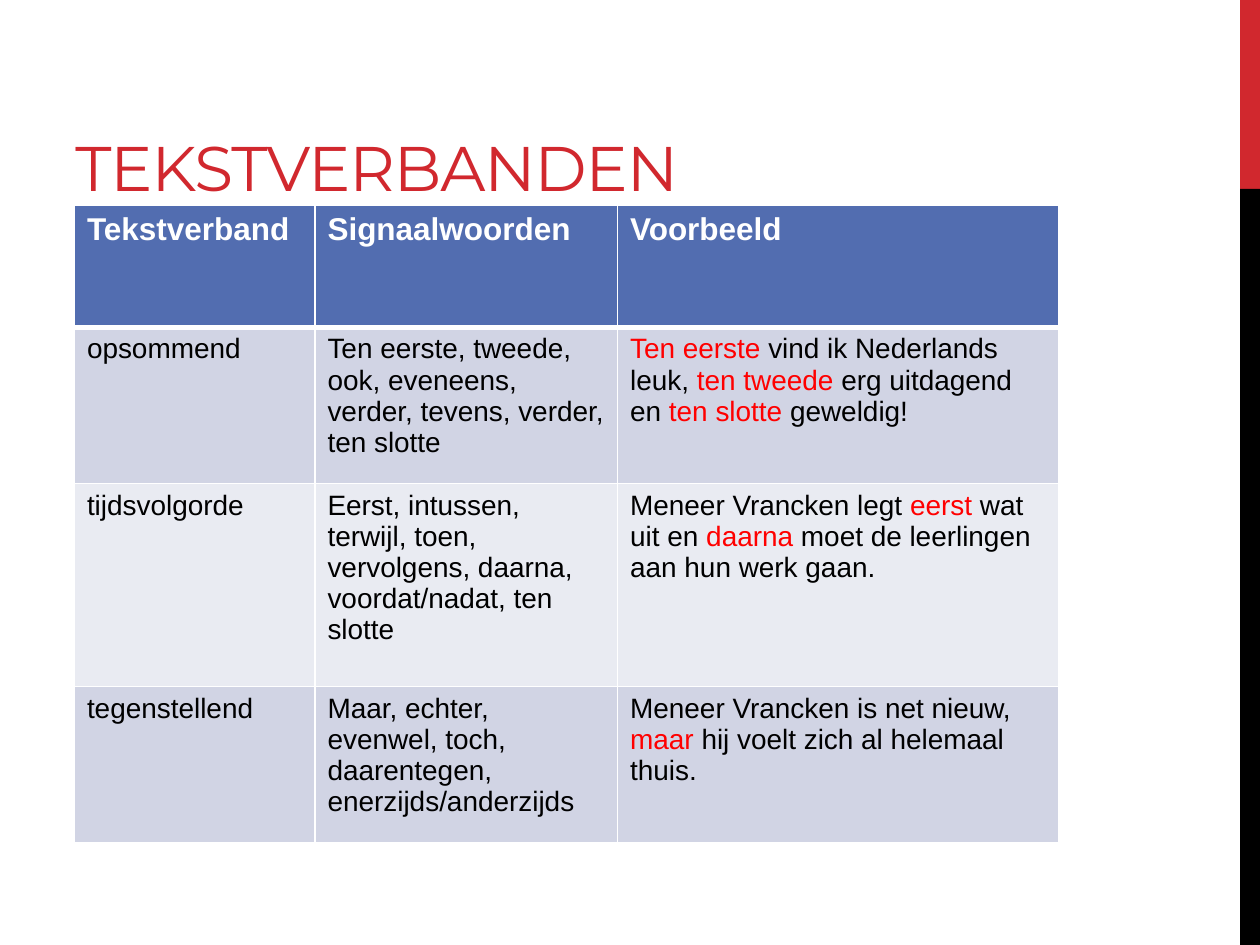
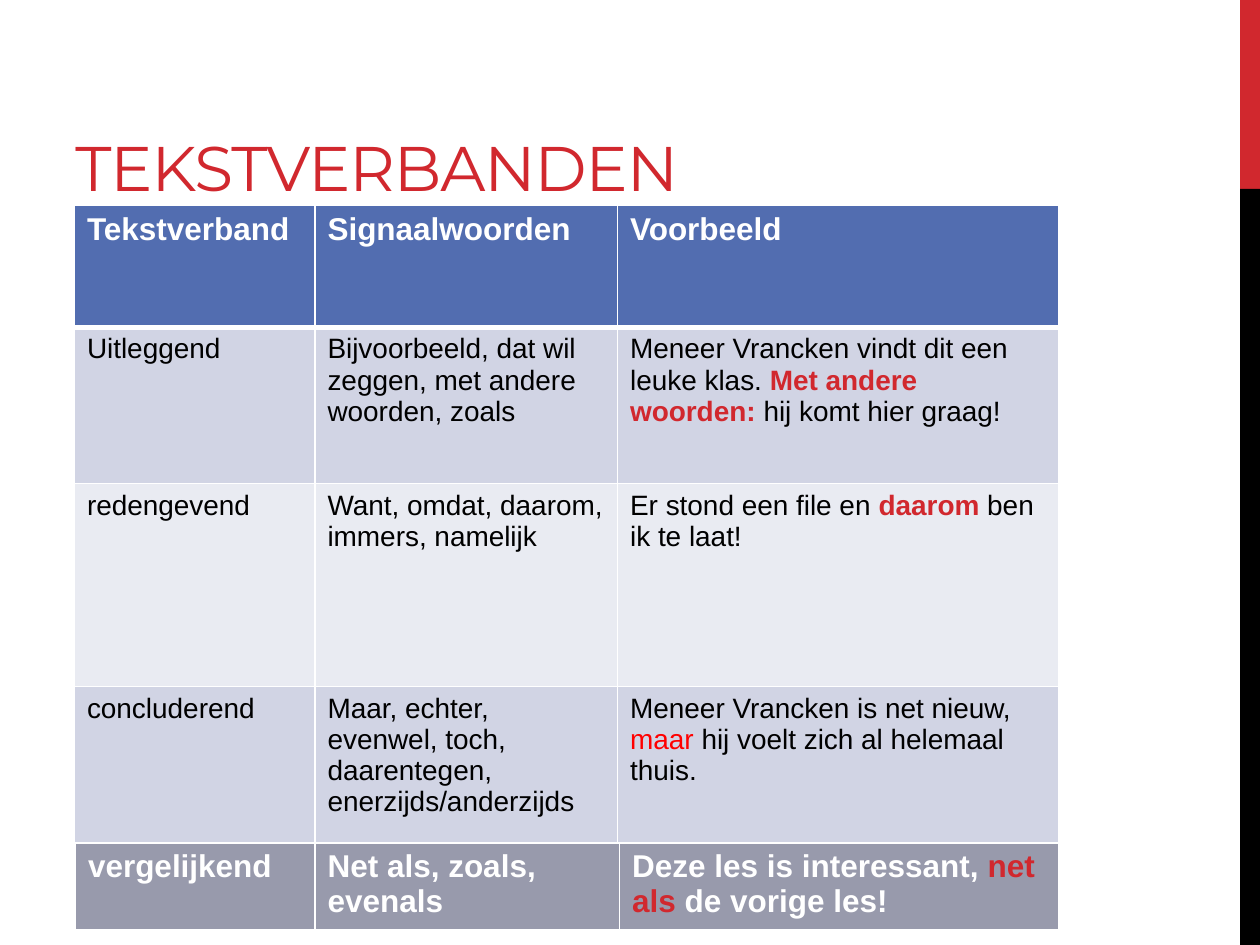
from dataclasses import dataclass

from lxml.etree import SubElement
from pptx import Presentation
from pptx.dml.color import RGBColor as RGB
from pptx.enum.shapes import MSO_SHAPE as SHAPE
from pptx.enum.text import MSO_ANCHOR as ANCHOR
from pptx.oxml.ns import qn
from pptx.util import Cm, Pt


@dataclass(frozen=True)
class Theme:
    accent: str = "D1282E"
    red: str = "FF0000"
    black: str = "000000"
    white: str = "FFFFFF"
    header: str = "526DB0"
    odd_row: str = "D1D4E4"
    even_row: str = "E9EBF2"
    extra_row: str = "989AAC"
    title_font: str = "Montserrat"
    body_font: str = "Arial"
    title_size: int = 36
    head_size: int = 18
    body_size: int = 16
    thin: int = 1
    thick: int = 3


T = Theme()

# Boxes in cm: left, top, width, height
SLIDE = (0, 0, 25.4, 19.05)
TITLE = (1.27, 0.43, 16.08, 3.81)
MAIN = (1.5, 4.14)
EXTRA = (1.52, 16.99)

MAIN_COLS = (4.85, 6.1, 8.89)
MAIN_ROWS = (2.46, 3.15, 4.09, 3.15)
EXTRA_COLS = (4.83, 6.14, 8.86)
EXTRA_ROWS = (1.67,)


# Signal words inside a cell: (text, colour, bold)
def red(text):
    return text, T.red, False


def accent(text):
    return text, T.accent, True


HEADINGS = ("Tekstverband", "Signaalwoorden", "Voorbeeld")
CONTRAST = (
    "Maar, echter, evenwel, toch, daarentegen, enerzijds/anderzijds",
    ["Meneer Vrancken is net nieuw, ", red("maar"), " hij voelt zich al helemaal thuis."],
)
FIRST_RELATIONS = [
    ("opsommend",
     "Ten eerste, tweede, ook, eveneens, verder, tevens, verder, ten slotte",
     [red("Ten eerste "), "vind ik Nederlands leuk, ", red("ten tweede"),
      " erg uitdagend en ", red("ten slotte "), "geweldig!"]),
    ("tijdsvolgorde",
     "Eerst, intussen, terwijl, toen, vervolgens, daarna, voordat/nadat, ten slotte",
     ["Meneer Vrancken legt ", red("eerst "), "wat uit en ", red("daarna "),
      "moet de leerlingen aan hun werk gaan."]),
    ("tegenstellend", *CONTRAST),
]
MORE_RELATIONS = [
    ("Uitleggend",
     "Bijvoorbeeld, dat wil zeggen, met andere woorden, zoals",
     ["Meneer Vrancken vindt dit een leuke klas. ", accent("Met andere woorden:"),
      " hij komt hier graag!"]),
    ("redengevend",
     "Want, omdat, daarom, immers, namelijk",
     ["Er stond een file en ", accent("daarom"), " ben ik te laat!"]),
    ("concluderend", *CONTRAST),
]
COMPARISON = (
    "vergelijkend",
    "Net als, zoals, evenals",
    ["Deze les is interessant, ", accent("net als "), "de vorige les!"],
)


def set_font(font, name, size, color, bold=False):
    font.name, font.size, font.bold = name, Pt(size), bold
    font.color.rgb = RGB.from_string(color)


def add_side_band(slide, box):
    """Red over black band along the right edge of the box."""
    left, top, width, height = box
    band_w, red_h = 0.4, 3.81
    x = left + width - band_w
    for y, h, color in ((top, red_h, T.accent), (top + red_h, height - red_h, T.black)):
        sp = slide.shapes.add_shape(SHAPE.RECTANGLE, Cm(x), Cm(y), Cm(band_w), Cm(h))
        sp.shadow.inherit = False
        sp.fill.solid()
        sp.fill.fore_color.rgb = RGB.from_string(color)
        sp.line.fill.background()


def add_title(slide, box, text):
    tf = slide.shapes.add_textbox(*map(Cm, box)).text_frame
    tf.word_wrap = True
    tf.vertical_anchor = ANCHOR.BOTTOM
    p = tf.paragraphs[0]
    r = p.add_run()
    r.text = text
    set_font(p.font, T.title_font, T.title_size, T.accent)
    set_font(r.font, T.title_font, T.title_size, T.accent)
    r.font._element.set("spc", "-60")


def set_borders(cell, top, bottom):
    tc_pr = cell._tc.get_or_add_tcPr()
    for side, width in (("L", T.thin), ("R", T.thin), ("T", top), ("B", bottom)):
        ln = SubElement(tc_pr, qn(f"a:ln{side}"), w=str(Pt(width)))
        SubElement(SubElement(ln, qn("a:solidFill")), qn("a:srgbClr"), val=T.white)


def fill_cell(cell, content, fill, size, color, bold):
    cell.fill.solid()
    cell.fill.fore_color.rgb = RGB.from_string(fill)
    p = cell.text_frame.paragraphs[0]
    for part in [content] if isinstance(content, str) else content:
        text, *mark = (part, color, bold) if isinstance(part, str) else part
        r = p.add_run()
        r.text = text
        set_font(r.font, T.body_font, size, *mark)


def add_grid(slide, origin, cols, heights, rows, styles, borders):
    """Table at origin; styles and borders hold one entry for each row."""
    frame = slide.shapes.add_table(
        len(rows), len(cols), *map(Cm, (*origin, sum(cols), sum(heights))))
    table = frame.table
    for column, width in zip(table.columns, cols):
        column.width = Cm(width)
    for row, height, contents, style, edges in zip(
            table.rows, heights, rows, styles, borders):
        row.height = Cm(height)
        for cell, content in zip(row.cells, contents):
            set_borders(cell, *edges)
            fill_cell(cell, content, *style)


def add_relations_table(slide, origin, relations):
    head = (T.header, T.head_size, T.white, True)
    odd, even = ((fill, T.body_size, T.black, False) for fill in (T.odd_row, T.even_row))
    plain = (T.thin, T.thin)
    add_grid(slide, origin, MAIN_COLS, MAIN_ROWS, [HEADINGS, *relations],
             [head, odd, even, odd],
             [(T.thin, T.thick), (T.thick, T.thin), plain, plain])


def add_comparison_row(slide, origin):
    add_grid(slide, origin, EXTRA_COLS, EXTRA_ROWS, [COMPARISON],
             [(T.extra_row, T.head_size, T.white, True)], [(T.thin, T.thick)])


def add_relations_slide(prs, relations):
    slide = prs.slides.add_slide(prs.slide_layouts[6])
    add_side_band(slide, SLIDE)
    add_title(slide, TITLE, "TEKSTVERBANDEN")
    add_relations_table(slide, MAIN, relations)
    return slide


def main():
    prs = Presentation()
    prs.slide_width, prs.slide_height = map(Cm, SLIDE[2:])
    add_relations_slide(prs, FIRST_RELATIONS)
    add_comparison_row(add_relations_slide(prs, MORE_RELATIONS), EXTRA)
    prs.save("out.pptx")


if __name__ == "__main__":
    main()
